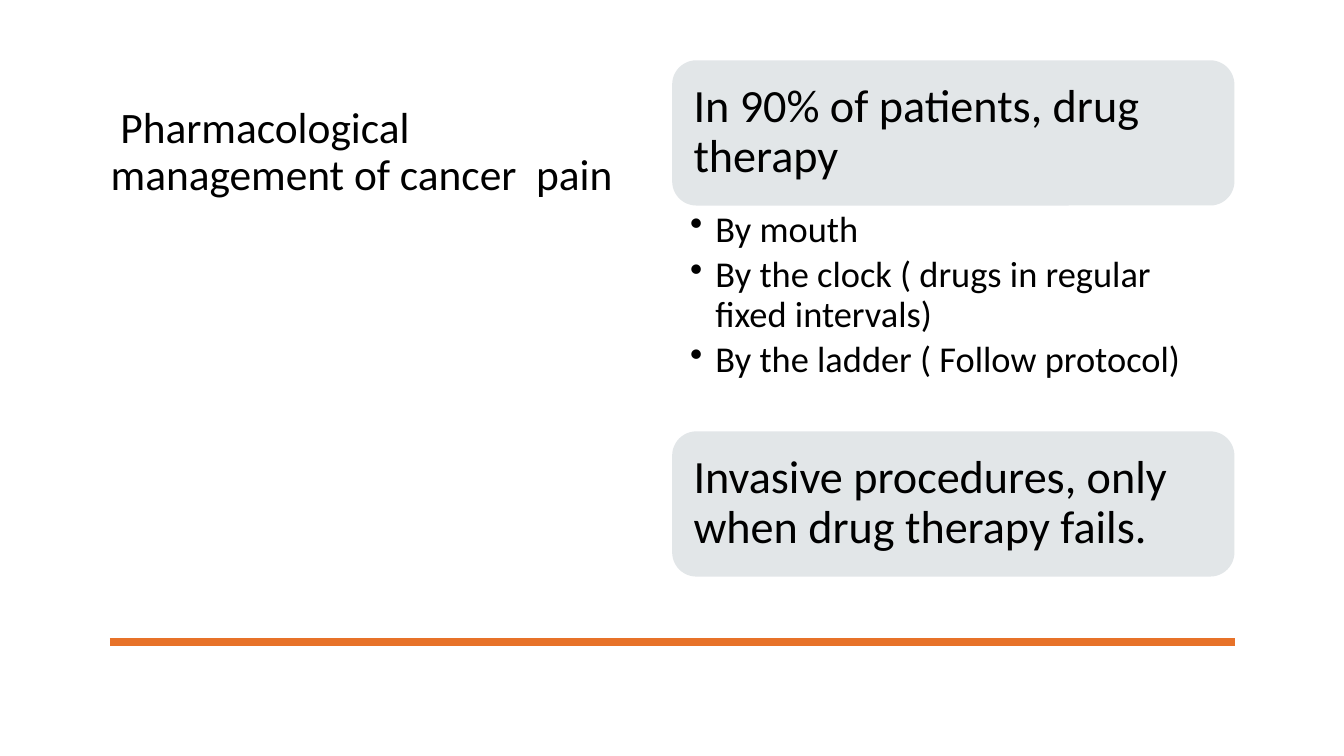
from lxml import etree
from pptx import Presentation
from pptx.dml.color import RGBColor
from pptx.enum.shapes import MSO_CONNECTOR as CONN, MSO_SHAPE as SHAPE
from pptx.enum.text import MSO_ANCHOR as ANCHOR, PP_ALIGN as ALIGN
from pptx.oxml.ns import qn
from pptx.util import Cm, Pt


class SlideBuilder:
    """Holds the style and the current slide."""
    FONT = "Calibri"
    COLORS = {"text": "000000", "card": "E2E6E8", "rule": "E77229"}

    def __init__(self, slide):
        self.s = slide

    def color(self, name):
        return RGBColor.from_string(self.COLORS[name])

    def set_text(self, sp, lines, size, insets, anchor=ANCHOR.TOP, bullet=False):
        tf = sp.text_frame
        tf.word_wrap = True
        tf.vertical_anchor = anchor
        tf.margin_left, tf.margin_top, tf.margin_right, tf.margin_bottom = map(Cm, insets)
        tf.text = "\n".join(lines)
        for p in tf.paragraphs:
            p.alignment = ALIGN.LEFT
            p.line_spacing = 0.9
            if bullet:
                self.bullet(p)
            for r in p.runs:
                r.font.name = self.FONT
                r.font.size = Pt(size)
                r.font.color.rgb = self.color("text")

    def bullet(self, p):
        p.space_after = Pt(4.5)
        pPr = p._p.get_or_add_pPr()
        pPr.set("marL", str(Cm(0.64)))
        pPr.set("indent", str(-Cm(0.64)))
        etree.SubElement(pPr, qn("a:buChar")).set("char", "•")

    def text(self, x, y, w, h, lines, size, insets, bullet=False):
        sp = self.s.shapes.add_textbox(Cm(x), Cm(y), Cm(w), Cm(h))
        self.set_text(sp, lines, size, insets, bullet=bullet)

    def card(self, x, y, w, h, line):
        sp = self.s.shapes.add_shape(SHAPE.ROUNDED_RECTANGLE, Cm(x), Cm(y), Cm(w), Cm(h))
        sp.shadow.inherit = False
        sp.fill.solid()
        sp.fill.fore_color.rgb = self.color("card")
        sp.line.fill.background()
        self.set_text(sp, [line], 33, [0.36] * 4, ANCHOR.MIDDLE)

    def rule(self, x1, x2, y):
        line = self.s.shapes.add_connector(CONN.STRAIGHT, Cm(x1), Cm(y), Cm(x2), Cm(y))
        line.line.color.rgb = self.color("rule")
        line.line.width = Pt(6)
        etree.SubElement(line._element.spPr, qn("a:effectLst"))


def main():
    prs = Presentation()
    prs.slide_width, prs.slide_height = Cm(33.87), Cm(19.05)
    b = SlideBuilder(prs.slides.add_slide(prs.slide_layouts[6]))

    # Title and rule
    b.text(2.54, 2.54, 13.54, 4.06, [" Pharmacological management of cancer  pain"],
           31, (0.25, 0.13, 0.25, 0.13))
    b.rule(2.77, 31.12, 16.18)

    # Right column: card, list, card stacked without gaps
    left, top, width = 16.94, 1.52, 14.17
    card_h, list_h = 3.66, 5.69
    b.card(left, top, width, card_h, "In 90% of patients, drug therapy")
    b.text(left, top + card_h, width, list_h,
           ["By mouth",
            "By the clock ( drugs in regular fixed intervals)",
            "By the ladder ( Follow protocol)"],
           26, (0.45, 0.13, 0.65, 0.13), bullet=True)
    b.card(left, top + card_h + list_h, width, card_h,
           "Invasive procedures, only when drug therapy fails.")

    prs.save("out.pptx")


if __name__ == "__main__":
    main()
